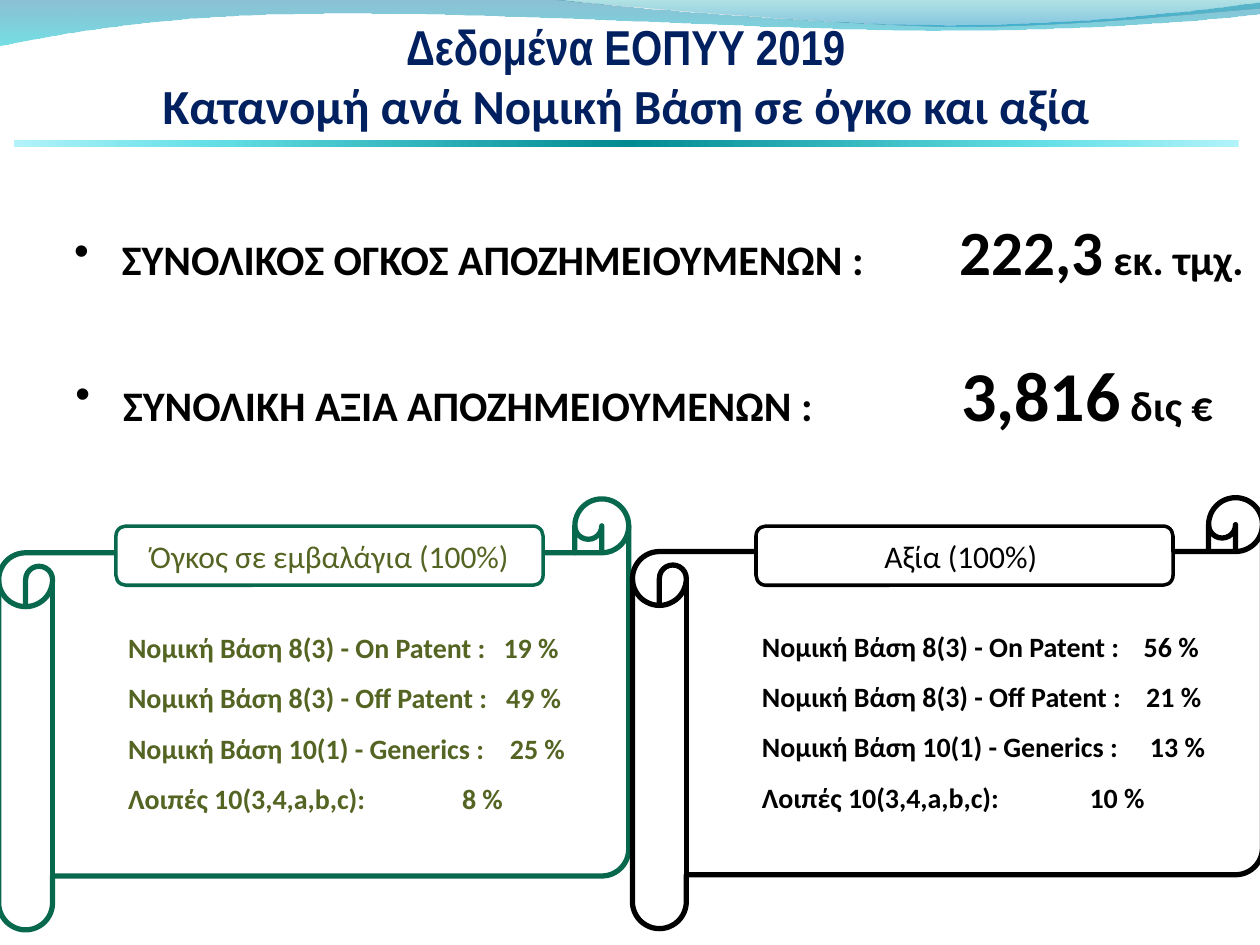
from dataclasses import dataclass
from lxml.etree import SubElement
from pptx import Presentation
from pptx.dml.color import RGBColor
from pptx.enum.shapes import MSO_SHAPE as Preset
from pptx.enum.text import MSO_ANCHOR as Anchor, MSO_AUTO_SIZE as AutoSize, PP_ALIGN as Align
from pptx.oxml.ns import qn
from pptx.util import Emu, Inches, Pt

# The slide is a grid of 100 columns by 75 rows of square cells
SLIDE_WIDTH, SLIDE_HEIGHT = Inches(10), Inches(7.5)
COLUMNS, ROWS = 100, 75
COLORS = {
    "navy": "002060", "black": "000000", "white": "FFFFFF",
    "green": "08684E", "olive": "546422",
    "blue": "0074A1", "cyan": "00C6CF", "teal": "00A1A9", "sky": "008BBF",
    "rule": "008A91", "rule mid": "64DFE7", "rule edge": "B1F3F9",
}


@dataclass
class Wave:
    start: tuple[float, float]
    segments: list[list[tuple[float, float]]]  # one point: line, three points: curve
    stops: list[tuple[float, str, float]]


@dataclass
class Total:
    left: float
    top: float
    height: float
    label: str
    value: str
    unit: str
    value_size: int


@dataclass
class Row:
    label: str
    value: str
    tab: float


@dataclass
class Panel:
    left: float
    top: float
    header_left: float
    header_width: float
    header: str
    line: str
    text: str
    rows: list[Row]


WAVES = [
    Wave((0, -0.1), [
        [(44, -0.1)], [(47.6, 0.5), (66.4, 2), (75.8, 2)], [(85.3, 2), (95.8, 0.8), (100, 0.2)],
        [(100.1, 1.1)], [(98.3, 1.4), (87, 2.4), (74.6, 2.4)],
        [(62.2, 2.4), (38.2, 0.9), (25.7, 1.1)], [(12.9, 1.1), (4.6, 2.7), (-0.1, 3.6)],
    ], [(0, "blue", 45), (100, "cyan", 55)]),
    Wave((43.7, 0), [
        [(47, 0.4), (65.6, 1.9), (75, 2.1)], [(84.4, 2.2), (95.8, 1), (100, 0.7)], [(100, 0)],
    ], [(0, "teal", 30), (80, "sky", 45)]),
]
RULE_STOPS = [(0, "rule edge", 100), (16, "rule mid", 100), (50, "rule", 100),
              (84, "rule mid", 100), (100, "rule edge", 100)]
TITLE = [("Δεδομένα ΕΟΠΥΥ 2019 ", "Arial Narrow"),
         ("Κατανομή ανά Νομική Βάση σε όγκο και αξία ", "Calibri")]
TOTALS = [
    Total(-0.1, 13.4, 10.1, "ΣΥΝΟΛΙΚΟΣ ΟΓΚΟΣ ΑΠΟΖΗΜΕΙΟΥΜΕΝΩΝ :", "222,3", " εκ. τμχ.", 36),
    Total(0, 24.1, 11.1, "ΣΥΝΟΛΙΚΗ ΑΞΙΑ ΑΠΟΖΗΜΕΙΟΥΜΕΝΩΝ :", "3,816", " δις €", 40),
]
BASES = ["Νομική Βάση 8(3) - On Patent :", "Νομική Βάση 8(3) - Off Patent :",
         "Νομική Βάση 10(1) - Generics :", "Λοιπές 10(3,4,a,b,c):"]


def make_rows(values: list[str], tabs: list[float]) -> list[Row]:
    return [Row(*parts) for parts in zip(BASES, values, tabs)]


# The headers part their words with an en space and an em space
PANELS = [
    Panel(-0.1, 39.6, 9.2, 33.9, "Όγκος σε εμβαλάγια (100%)", "green", "olive",
          make_rows(["19 %", "49 %", "25 %", "8 %"], [29.8, 30, 30.3, 26.5])),
    Panel(50.2, 39.5, 60, 33.1, "Αξία (100%) ", "black", "black",
          make_rows(["56 %", "21 %", "13 %", "10 %"], [30.3, 30.5, 30.8, 26])),
]


def col(count: float) -> Emu:
    return Emu(round(SLIDE_WIDTH * count / COLUMNS))


def row(count: float) -> Emu:
    return Emu(round(SLIDE_HEIGHT * count / ROWS))


def box(left: float, top: float, width: float, height: float) -> tuple:
    return col(left), row(top), col(width), row(height)


def color(name: str) -> RGBColor:
    return RGBColor.from_string(COLORS[name])


def set_font(font, size: float, color_name: str, bold: bool, name: str = "Calibri") -> None:
    font.name, font.size, font.bold = name, Pt(size), bold
    font.color.rgb = color(color_name)


def set_gradient(shape, stops: list[tuple[float, str, float]], angle: float) -> None:
    shape.shadow.inherit = False
    shape.line.fill.background()
    shape.fill.gradient()
    shape.fill.gradient_angle = angle
    stop_list = shape.element.spPr.find(qn("a:gradFill")).find(qn("a:gsLst"))
    for old_stop in list(stop_list):
        stop_list.remove(old_stop)
    for position, name, opacity in stops:
        stop = SubElement(stop_list, qn("a:gs"), pos=str(position * 1000))
        fill = SubElement(stop, qn("a:srgbClr"), val=COLORS[name])
        SubElement(fill, qn("a:alpha"), val=str(opacity * 1000))


def set_outline(shape, name: str, width: float) -> None:
    shape.shadow.inherit = False
    shape.line.color.rgb = color(name)
    shape.line.width = Pt(width)


def add_tab(paragraph, position: float) -> None:
    tabs = SubElement(paragraph._p.get_or_add_pPr(), qn("a:tabLst"))
    SubElement(tabs, qn("a:tab"), pos=str(col(position)), algn="l")


def add_bullet(paragraph, margin: float, indent: float) -> None:
    properties = paragraph._p.get_or_add_pPr()
    properties.set("marL", str(col(margin)))
    properties.set("indent", str(col(indent)))
    SubElement(properties, qn("a:buFont"), typeface="Arial")
    SubElement(properties, qn("a:buChar"), char="•")


def draw_wave(shapes, wave: Wave) -> None:
    builder = shapes.build_freeform(col(wave.start[0]), row(wave.start[1]))
    points = [(col(x), row(y)) for segment in wave.segments for x, y in segment]
    builder.add_line_segments(points, close=True)
    shape = builder.convert_to_shape()
    # Join each group of three points into one Bézier curve
    lines = iter(list(shape.element.iter(qn("a:lnTo"))))
    for segment in wave.segments:
        parts = [next(lines) for _ in segment]
        if len(parts) == 3:
            outline = parts[0].getparent()
            curve = SubElement(outline, qn("a:cubicBezTo"))
            parts[0].addprevious(curve)
            for part in parts:
                curve.append(part[0])
                outline.remove(part)
    set_gradient(shape, wave.stops, 270)


def draw_title(title) -> None:
    title.left, title.top, title.width, title.height = box(0, 0, 100.2, 11.5)
    frame = title.text_frame
    frame.auto_size, frame.vertical_anchor = AutoSize.NONE, Anchor.MIDDLE
    frame.margin_left = frame.margin_right = frame.margin_bottom = 0
    frame.text = "\n".join(text for text, _ in TITLE)
    for paragraph, (_, font_name) in zip(frame.paragraphs, TITLE):
        paragraph.alignment = Align.CENTER
        set_font(paragraph.font, 28, "navy", True, font_name)


def draw_total(shapes, total: Total) -> None:
    frame = shapes.add_textbox(*box(total.left, total.top, 100, total.height)).text_frame
    frame.word_wrap, frame.auto_size = True, AutoSize.SHAPE_TO_FIT_TEXT
    paragraph = frame.paragraphs[0]
    paragraph.line_spacing = 1.5
    add_bullet(paragraph, 8.8, -3.8)
    add_tab(paragraph, 75.3)
    for text, size in ((total.label + "\t", 24), (total.value, total.value_size), (total.unit, 24)):
        run = paragraph.add_run()
        run.text = text
        set_font(run.font, size, "black", True)


def draw_panel(shapes, panel: Panel) -> None:
    group = shapes.add_group_shape().shapes
    scroll = group.add_shape(Preset.HORIZONTAL_SCROLL, *box(panel.left, panel.top, 50, 34.2))
    scroll.fill.background()
    set_outline(scroll, panel.line, 3)
    frame = scroll.text_frame
    frame.word_wrap, frame.vertical_anchor = True, Anchor.MIDDLE
    frame.margin_left = col(6)
    frame.text = "\n".join(f"{item.label}\t{item.value}" for item in panel.rows)
    for paragraph, item in zip(frame.paragraphs, panel.rows):
        paragraph.alignment = Align.LEFT
        paragraph.line_spacing = 1.5
        add_tab(paragraph, item.tab)
        set_font(paragraph.font, 16, panel.text, True)

    header = group.add_shape(Preset.ROUNDED_RECTANGLE,
                             *box(panel.header_left, 41.75, panel.header_width, 4.7))
    header.fill.solid()
    header.fill.fore_color.rgb = color("white")
    set_outline(header, panel.line, 2)
    header.text_frame.text = panel.header
    header.text_frame.vertical_anchor = Anchor.MIDDLE
    paragraph = header.text_frame.paragraphs[0]
    paragraph.alignment = Align.CENTER
    set_font(paragraph.font, 18, panel.text, False)


def main() -> None:
    presentation = Presentation()
    presentation.slide_width, presentation.slide_height = SLIDE_WIDTH, SLIDE_HEIGHT
    slide = presentation.slides.add_slide(presentation.slide_layouts[5])
    shapes = slide.shapes

    # Waves and rule, behind the title
    for wave in WAVES:
        draw_wave(shapes, wave)
    set_gradient(shapes.add_shape(Preset.RECTANGLE, *box(1.1, 11.1, 97.2, 0.55)), RULE_STOPS, 0)
    title = shapes.title
    title.element.getparent().append(title.element)
    draw_title(title)

    # Totals and the two scrolls
    for total in TOTALS:
        draw_total(shapes, total)
    for panel in PANELS:
        draw_panel(shapes, panel)
    presentation.save("out.pptx")


if __name__ == "__main__":
    main()
